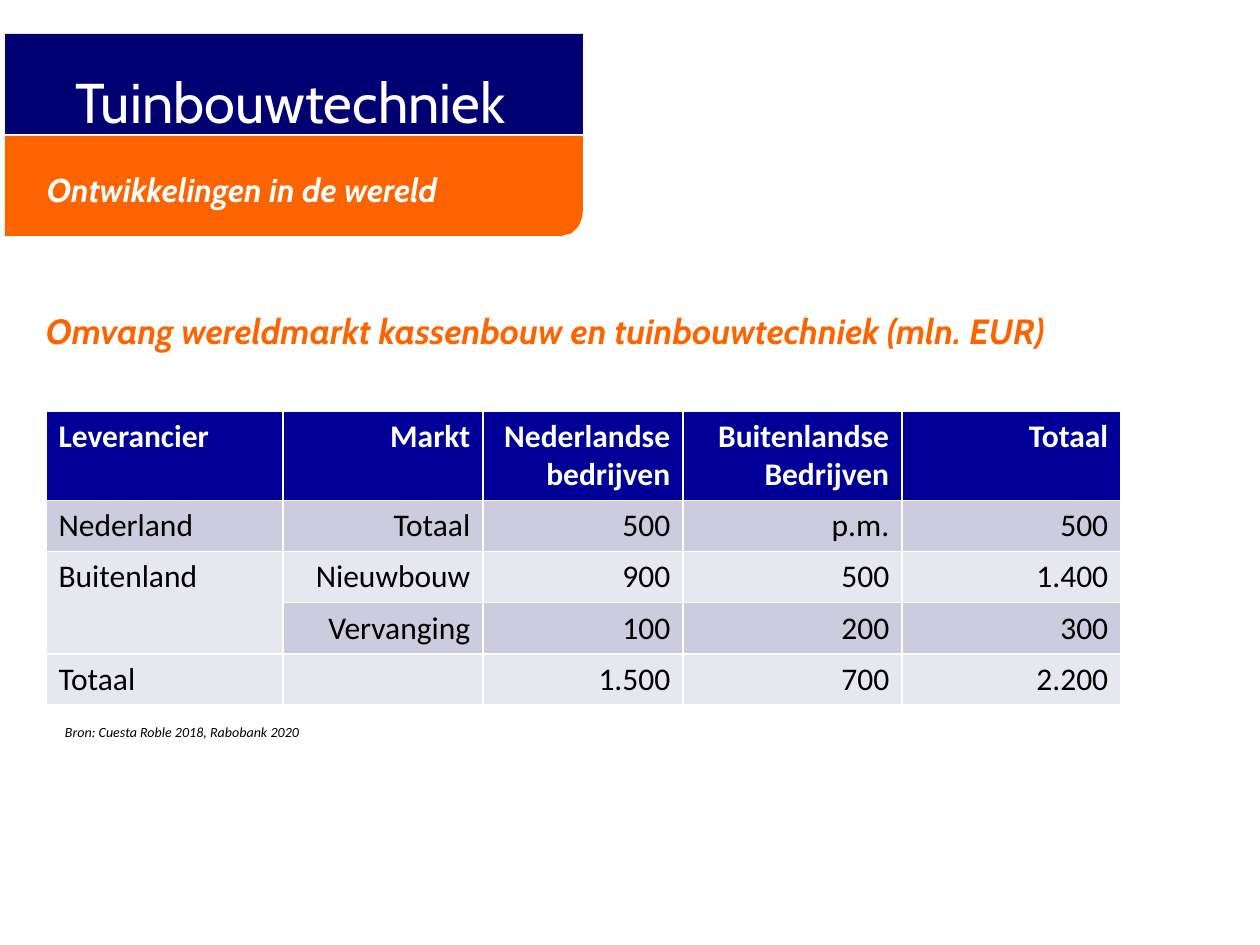
from pptx import Presentation
from pptx.dml.color import RGBColor
from pptx.enum.text import MSO_ANCHOR, MSO_AUTO_SIZE, PP_ALIGN
from pptx.util import Pt

SCALE = 914400 / 126
NAVY, ORANGE, WHITE, BLACK = "000073", "FD6400", "FFFFFF", "000000"
HEADER_FILL, BAND_FILLS = "000099", ("CCCCDE", "E7E7EF")
COLUMN_WIDTHS = (237, 200, 200, 219, 219)
HEADER_HEIGHT, ROW_HEIGHT = 88, 51
MARKET_ROWS = (
    ("Leverancier", "Markt", "Nederlandse\nbedrijven", "Buitenlandse Bedrijven", "Totaal"),
    ("Nederland", "Totaal", "500", "p.m.", "500"),
    ("Buitenland", "Nieuwbouw", "900", "500", "1.400"),
    ("", "Vervanging", "100", "200", "300"),
    ("Totaal", "", "1.500", "700", "2.200"),
)


def px(length):
    """Turn px into EMU."""
    return round(length * SCALE)


def color(value):
    """Turn a hex string into a colour."""
    return RGBColor.from_string(value)


def paint(target, value):
    """Give a shape or cell a solid fill."""
    target.fill.solid()
    target.fill.fore_color.rgb = color(value)


def add_span(para, text, font, size, value, bold=False, italic=False):
    """Add one formatted run to a paragraph."""
    span = para.add_run()
    span.text = text
    span.font.name, span.font.size = font, Pt(size)
    span.font.bold, span.font.italic = bold, italic
    span.font.color.rgb = color(value)


def prepare_frame(frame, left=0, top=0, anchor=MSO_ANCHOR.TOP):
    """Set insets, wrapping and anchor, and return the first paragraph."""
    frame.auto_size = MSO_AUTO_SIZE.NONE
    frame.word_wrap = True
    frame.margin_left, frame.margin_top = px(left), px(top)
    frame.margin_right = frame.margin_bottom = 0
    frame.vertical_anchor = anchor
    para = frame.paragraphs[0]
    para.alignment = PP_ALIGN.LEFT
    return para


def add_title(page, left, top, width, height):
    """Place the title on its navy bar."""
    title = page.shapes.title
    title.left, title.top = px(left), px(top)
    title.width, title.height = px(width), px(height)
    paint(title, NAVY)
    para = prepare_frame(title.text_frame, left=71, anchor=MSO_ANCHOR.BOTTOM)
    para.line_spacing = 0.8
    add_span(para, "Tuinbouwtechniek", "Cabin", 32, WHITE)


def corner_points(right, bottom, steps=12):
    """Return points along the rounded lower right corner."""
    controls = ((right, bottom - 33), (right, bottom + 2),
                (right - 19, bottom), (right - 32, bottom))
    points = []
    for step in range(steps + 1):
        t = step / steps
        weights = ((1 - t) ** 3, 3 * t * (1 - t) ** 2, 3 * t ** 2 * (1 - t), t ** 3)
        points.append(tuple(sum(weight * control[axis] for weight, control in zip(weights, controls))
                            for axis in (0, 1)))
    return points


def add_subtitle(page, left, top, width, height):
    """Place the subtitle on an orange bar with one round corner."""
    right, bottom = left + width, top + height
    builder = page.shapes.build_freeform(left, top, scale=SCALE)
    builder.add_line_segments([(right, top), *corner_points(right, bottom), (left, bottom)])
    bar = builder.convert_to_shape()
    bar.shadow.inherit = False
    paint(bar, ORANGE)
    bar.line.fill.background()
    para = prepare_frame(bar.text_frame, left=42, top=34)
    add_span(para, "Ontwikkelingen in de wereld", "Cabin", 18.8, WHITE, bold=True, italic=True)


def add_caption(page, left, top, width, height, text, font, size, value, bold=False):
    """Place one line of italic text."""
    box = page.shapes.add_textbox(px(left), px(top), px(width), px(height))
    add_span(prepare_frame(box.text_frame), text, font, size, value, bold, italic=True)


def fill_cell(cell, text, row, column):
    """Fill and write one table cell."""
    is_header = row == 0
    paint(cell, HEADER_FILL if is_header else BAND_FILLS[(row - 1) % 2])
    para = cell.text_frame.paragraphs[0]
    para.alignment = PP_ALIGN.RIGHT if column else PP_ALIGN.LEFT
    for index, line in enumerate(text.split("\n") if text else ()):
        if index:
            para.add_line_break()
        add_span(para, line, "Calibri", 18, WHITE if is_header else BLACK, bold=is_header)


def add_market_table(page, left, top):
    """Place the table of market sizes."""
    height = HEADER_HEIGHT + ROW_HEIGHT * (len(MARKET_ROWS) - 1)
    table = page.shapes.add_table(len(MARKET_ROWS), len(COLUMN_WIDTHS), px(left), px(top),
                                  px(sum(COLUMN_WIDTHS)), px(height)).table
    for column, width in zip(table.columns, COLUMN_WIDTHS):
        column.width = px(width)
    for row, texts in enumerate(MARKET_ROWS):
        table.rows[row].height = px(ROW_HEIGHT if row else HEADER_HEIGHT)
        for column, text in enumerate(texts):
            fill_cell(table.cell(row, column), text, row, column)
    table.cell(2, 0).merge(table.cell(3, 0))


def main():
    """Build and save the deck."""
    deck = Presentation()
    deck.slide_width, deck.slide_height = px(1260), px(945)
    page = deck.slides.add_slide(deck.slide_layouts[5])
    add_title(page, 5, 34, 578, 100)
    add_subtitle(page, 5, 136, 578, 100)
    add_caption(page, 46, 309, 1075, 45,
                "Omvang wereldmarkt kassenbouw en tuinbouwtechniek (mln. EUR)",
                "Cabin", 20, ORANGE, bold=True)
    add_market_table(page, 46, 411)
    add_caption(page, 65, 723, 265, 33, "Bron: Cuesta Roble 2018, Rabobank 2020",
                "Calibri", 8, BLACK)
    deck.save("out.pptx")


if __name__ == "__main__":
    main()
